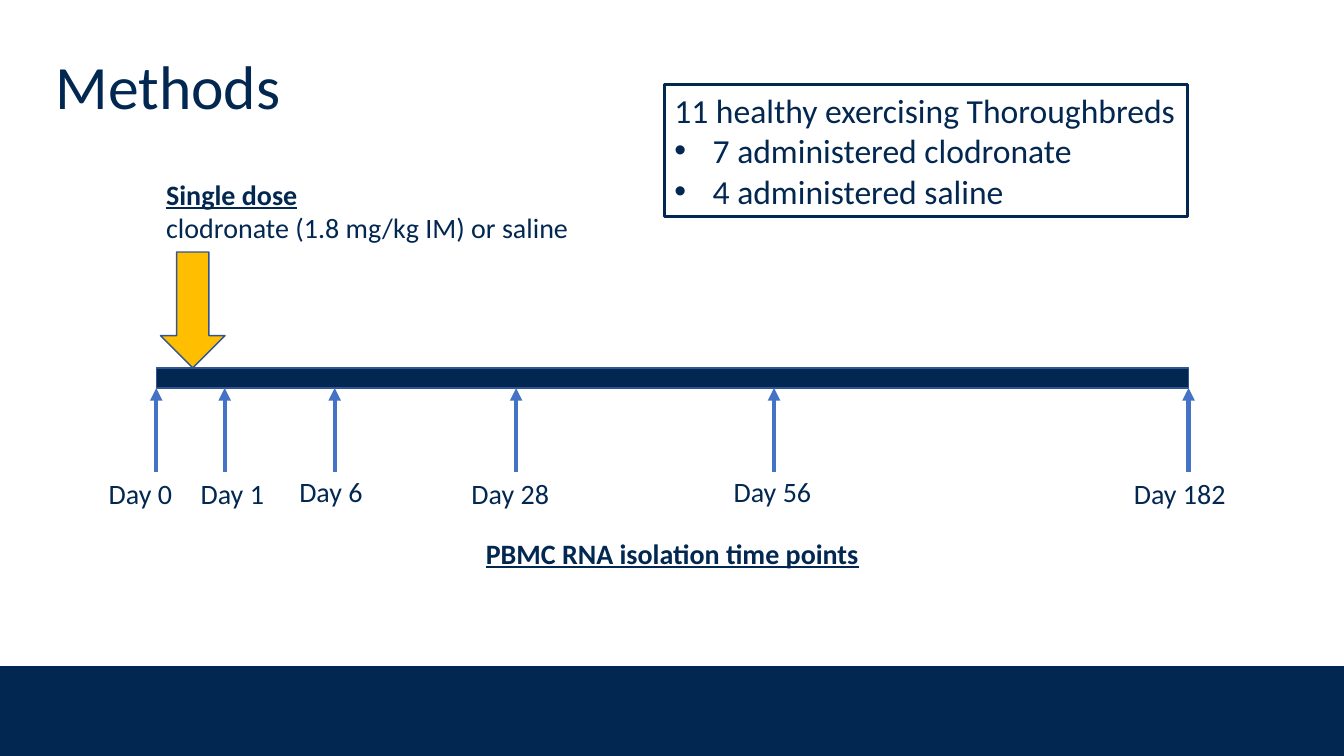
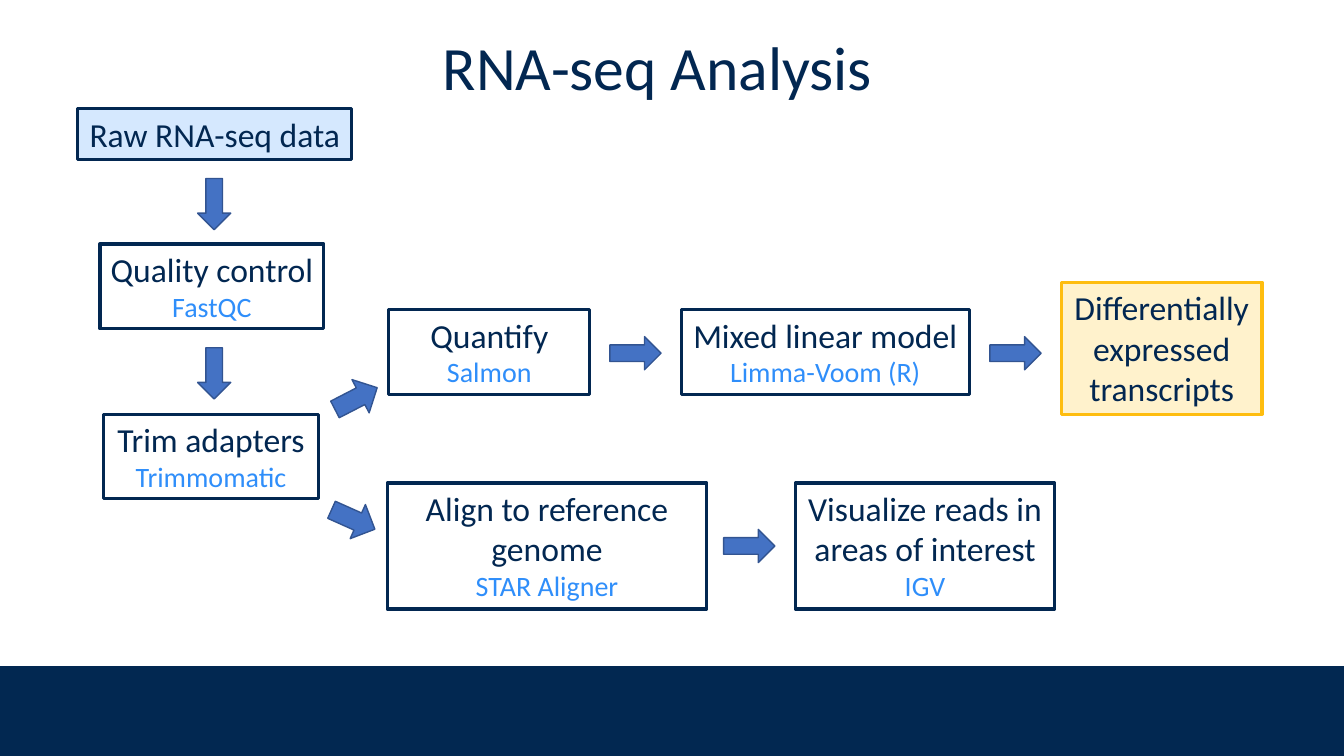
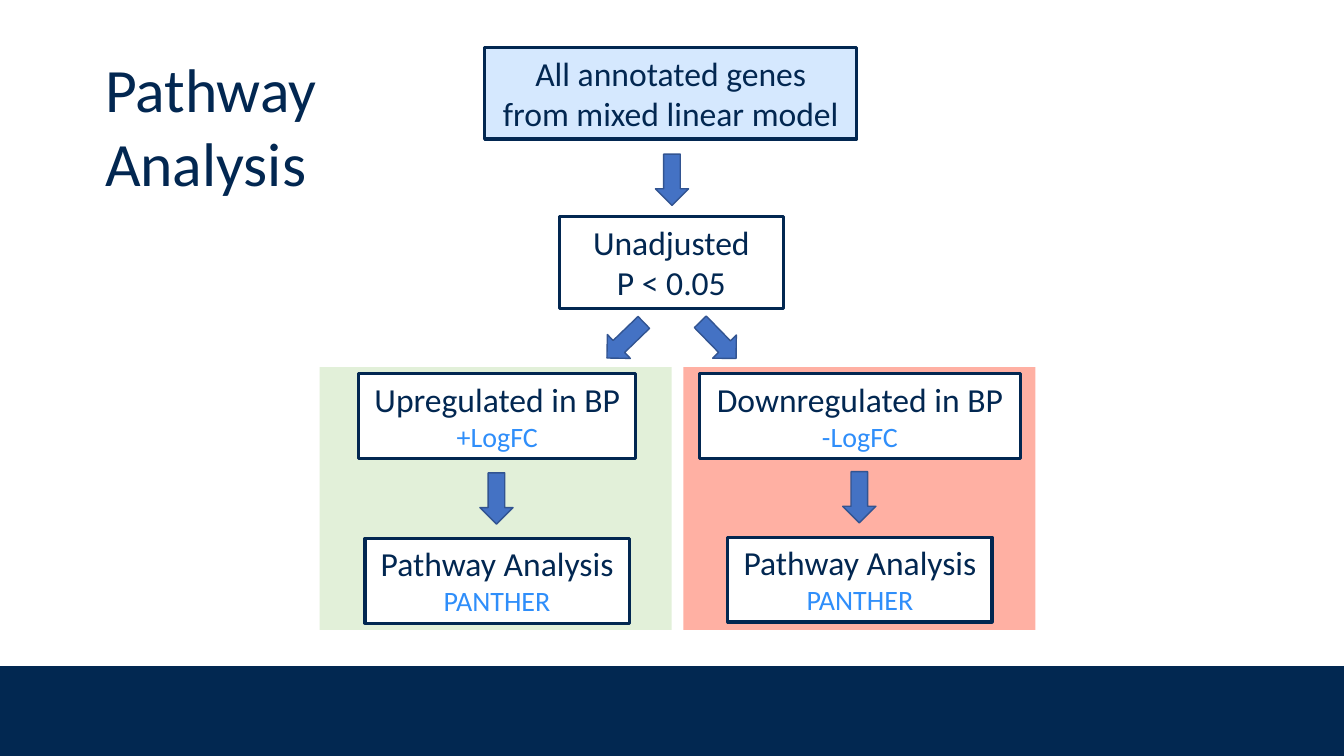
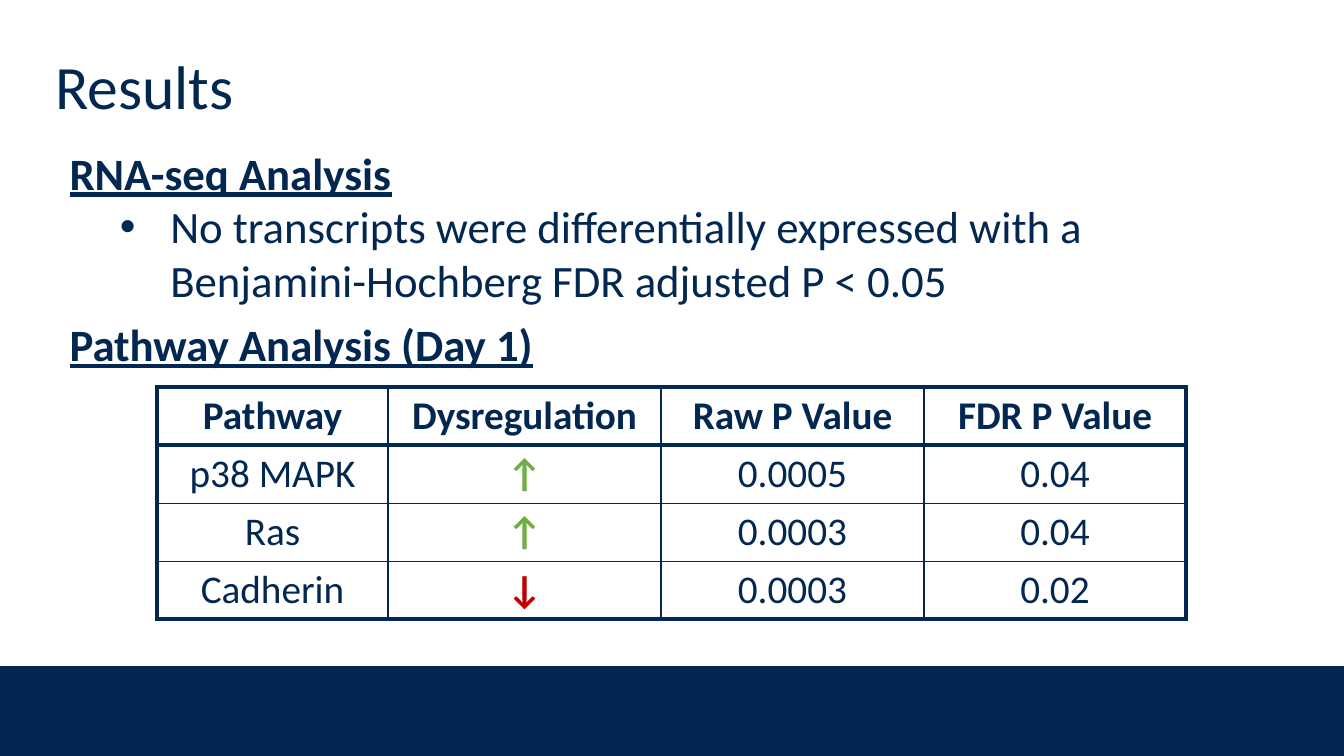
from dataclasses import dataclass
from typing import Optional, Sequence

from lxml import etree
from pptx import Presentation
from pptx import util as u
from pptx.dml.color import RGBColor
from pptx.enum import shapes, text
from pptx.oxml import ns

COLUMNS, ROWS = 32, 18
CELL = u.Inches(7.5) // ROWS
FONT = "Calibri"
NAVY, BAND, WHITE = "022751", "022851", "FFFFFF"
BLUE, BLUE_EDGE, TOOL_BLUE = "4472C4", "325491", "2F8EFA"
AMBER, GOLD, CREAM, SKY = "FFBF00", "FEBD0F", "FFF2CC", "D5E8FE"
RED, PALE_GREEN, GREEN, DARK_RED = "FF2600", "E2F0D9", "70AD47", "C00000"
LEFT, CENTER = text.PP_ALIGN.LEFT, text.PP_ALIGN.CENTER


@dataclass(frozen=True)
class Box:
    left: float
    top: float
    width: float
    height: float

    def place(self) -> tuple:
        return tuple(span(n) for n in (self.left, self.top, self.width, self.height))


@dataclass(frozen=True)
class Line:
    words: str
    size: float = 24
    color: str = NAVY
    heading: bool = False
    margin: float = 0
    hanging: float = 0


@dataclass(frozen=True)
class Step:
    box: Box
    label: Sequence[str]
    tool: str = ""
    fill: Optional[str] = None
    edge: str = NAVY


@dataclass(frozen=True)
class Arrow:
    x: float
    y: float
    rotation: float = 0
    length: float = 1.22
    thickness: float = 0.79


@dataclass(frozen=True)
class Sampling:
    label: str
    x: float
    label_left: float
    label_top: float
    label_width: float


def span(cells: float) -> u.Emu:
    return u.Emu(round(cells * CELL))


def rgb(color: str) -> RGBColor:
    return RGBColor.from_string(color)


def add_run(paragraph, words: str, size: float, color: str,
            bold: bool = False, underline: bool = False) -> None:
    run = paragraph.add_run()
    run.text = words
    run.font.name = FONT
    run.font.size = u.Pt(size)
    run.font.bold = bold
    run.font.underline = underline
    run.font.color.rgb = rgb(color)


def write(frame, lines: Sequence[Line], align=LEFT, side: float = 0.1) -> None:
    frame.word_wrap = True
    frame.auto_size = text.MSO_AUTO_SIZE.NONE
    frame.vertical_anchor = text.MSO_ANCHOR.TOP
    frame.margin_left = frame.margin_right = u.Inches(side)
    frame.margin_top = frame.margin_bottom = u.Inches(0.05)
    for index, line in enumerate(lines):
        paragraph = frame.add_paragraph() if index else frame.paragraphs[0]
        paragraph.alignment = align
        if line.hanging:
            properties = paragraph._p.get_or_add_pPr()
            properties.set("marL", str(u.Inches(line.margin)))
            properties.set("indent", str(-u.Inches(line.hanging)))
            font = etree.SubElement(properties, ns.qn("a:buFont"))
            font.set("typeface", "Arial")
            etree.SubElement(properties, ns.qn("a:buChar")).set("char", "•")
        add_run(paragraph, line.words, line.size, line.color,
                line.heading, line.heading)


def add_text(slide, box: Box, lines: Sequence[Line]) -> None:
    write(slide.shapes.add_textbox(*box.place()).text_frame, lines)


def add_block(slide, box: Box, fill: Optional[str] = None, edge: Optional[str] = None,
              weight: float = 1, kind=shapes.MSO_SHAPE.RECTANGLE, opacity: int = 100):
    block = slide.shapes.add_shape(kind, *box.place())
    block.shadow.inherit = False
    if fill:
        block.fill.solid()
        block.fill.fore_color.rgb = rgb(fill)
        if opacity < 100:
            color = next(block.element.spPr.iter(ns.qn("a:srgbClr")))
            etree.SubElement(color, ns.qn("a:alpha")).set("val", str(opacity * 1000))
    else:
        block.fill.background()
    if edge:
        block.line.color.rgb = rgb(edge)
        block.line.width = u.Pt(weight)
    else:
        block.line.fill.background()
    return block


def add_step(slide, step: Step) -> None:
    block = add_block(slide, step.box, step.fill, step.edge, 2.25)
    lines = [Line(words) for words in step.label]
    if step.tool:
        lines.append(Line(step.tool, 20, TOOL_BLUE))
    write(block.text_frame, lines, CENTER, 0.05)


def add_arrow(slide, arrow: Arrow) -> None:
    box = Box(arrow.x - arrow.length / 2, arrow.y - arrow.thickness / 2,
              arrow.length, arrow.thickness)
    block = add_block(slide, box, BLUE, BLUE_EDGE, kind=shapes.MSO_SHAPE.RIGHT_ARROW)
    block.rotation = arrow.rotation


def add_flow(slide, steps: Sequence[Step], arrows: Sequence[Arrow]) -> None:
    for step in steps:
        add_step(slide, step)
    for arrow in arrows:
        add_arrow(slide, arrow)


def add_sampling(slide, sampling: Sampling) -> None:
    pointer = slide.shapes.add_connector(
        shapes.MSO_CONNECTOR.STRAIGHT, span(sampling.x), span(11.23),
        span(sampling.x), span(9.24))
    pointer.line.color.rgb = rgb(BLUE)
    pointer.line.width = u.Pt(3)
    outline = pointer.line._get_or_add_ln()
    etree.SubElement(outline, ns.qn("a:tailEnd")).set("type", "triangle")
    etree.SubElement(pointer.element.spPr, ns.qn("a:effectLst"))
    add_text(slide, Box(sampling.label_left, sampling.label_top,
                        sampling.label_width, 1.06), [Line(sampling.label, 20)])


def add_slide(deck, title_box: Box, *title: str):
    slide = deck.slides.add_slide(deck.slide_layouts[5])
    heading = slide.shapes.title
    heading.left, heading.top, heading.width, heading.height = title_box.place()
    write(heading.text_frame, [Line(words, 44) for words in title])
    return slide


def share_band(slide) -> None:
    band = add_block(slide, Box(0, 15.86, COLUMNS, 2.14), BAND)
    slide.slide_layout.shapes.element.insert(2, band.element)


def build_methods(deck) -> None:
    slide = add_slide(deck, Box(1.08, 1.01, 6.36, 2.02), "Methods")
    share_band(slide)
    add_block(slide, Box(3.72, 8.76, 24.58, 0.48), NAVY, BLUE_EDGE)
    add_block(slide, Box(3.82, 6, 1.54, 2.76), AMBER, BLUE_EDGE,
              kind=shapes.MSO_SHAPE.DOWN_ARROW)
    for sampling in (
        Sampling("Day 0", 3.72, 2.35, 11.23, 2.3),
        Sampling("Day 1", 5.35, 4.54, 11.23, 2.3),
        Sampling("Day 6", 7.97, 6.89, 11.18, 2.3),
        Sampling("Day 28", 12.29, 10.99, 11.23, 2.59),
        Sampling("Day 56", 18.43, 17.23, 11.18, 2.42),
        Sampling("Day 182", 28.3, 26.76, 11.23, 3.02),
    ):
        add_sampling(slide, sampling)
    add_text(slide, Box(3.72, 4.1, 10.37, 1.85), [
        Line("Single dose", 20, heading=True),
        Line("clodronate (1.8 mg/kg IM) or saline", 20)])
    add_text(slide, Box(11.33, 12.65, 9.62, 1.06),
             [Line("PBMC RNA isolation time points", 20, heading=True)])
    cohort = add_block(slide, Box(15.82, 2.02, 12.46, 3.14), edge=NAVY, weight=2.25)
    write(cohort.text_frame, [
        Line("11 healthy exercising Thoroughbreds"),
        Line("7 administered clodronate", margin=0.38, hanging=0.38),
        Line("4 administered saline", margin=0.38, hanging=0.38)])
    cohort.text_frame.margin_right = 0


def build_sequencing(deck) -> None:
    slide = add_slide(deck, Box(10.3, 0.58, 11.02, 2.02), "RNA-seq Analysis")
    add_flow(slide, [
        Step(Box(1.85, 2.59, 6.53, 1.2), ["Raw RNA-seq data"], fill=SKY),
        Step(Box(2.38, 5.81, 5.33, 2.02), ["Quality control"], "FastQC"),
        Step(Box(2.47, 9.86, 5.11, 2.02), ["Trim adapters"], "Trimmomatic"),
        Step(Box(9.26, 7.37, 4.78, 2.02), ["Quantify"], "Salmon"),
        Step(Box(16.22, 7.37, 6.86, 2.02), ["Mixed linear model"], "Limma-Voom (R)"),
        Step(Box(25.27, 6.72, 4.78, 3.14), ["Differentially expressed transcripts"],
             fill=CREAM, edge=GOLD),
        Step(Box(9.22, 11.5, 7.61, 3), ["Align to reference genome"], "STAR Aligner"),
        Step(Box(18.94, 11.5, 6.17, 3), ["Visualize reads in areas of interest"], "IGV"),
    ], [
        Arrow(5.1, 4.86, 90),
        Arrow(5.1, 8.89, 90),
        Arrow(8.48, 9.49, 332.7, 1.13, 0.89),
        Arrow(8.41, 12.37, 24.1, 1.13, 0.89),
        Arrow(15.13, 8.41),
        Arrow(24.18, 8.41),
        Arrow(17.84, 13),
    ])


def build_pathways(deck) -> None:
    slide = add_slide(deck, Box(2.26, 1.1, 7.08, 3.79), "Pathway", "Analysis")
    add_block(slide, Box(16.27, 8.74, 8.38, 6.26), RED, opacity=36)
    add_block(slide, Box(7.61, 8.74, 8.38, 6.26), PALE_GREEN)
    add_flow(slide, [
        Step(Box(11.54, 1.13, 8.86, 2.18),
             ["All annotated genes", "from mixed linear model"], fill=SKY),
        Step(Box(13.32, 5.16, 5.33, 2.18), ["Unadjusted", "P < 0.05"]),
        Step(Box(8.54, 8.9, 6.6, 2.02), ["Upregulated in BP"], "+LogFC", WHITE),
        Step(Box(16.66, 8.9, 7.63, 2.02), ["Downregulated in BP"], "-LogFC", WHITE),
        Step(Box(8.69, 12.82, 6.29, 2.02), ["Pathway Analysis"], "PANTHER", WHITE),
        Step(Box(17.33, 12.79, 6.29, 2.02), ["Pathway Analysis"], "PANTHER", WHITE),
    ], [
        Arrow(16, 4.28, 90),
        Arrow(14.89, 8.1, 136),
        Arrow(17.1, 8.1, 45.7),
        Arrow(11.82, 11.87, 90),
        Arrow(20.46, 11.84, 90),
    ])


def add_borders(cell, **weights: float) -> None:
    properties = cell._tc.get_or_add_tcPr()
    for side, weight in weights.items():
        border = etree.SubElement(properties, ns.qn(f"a:ln{side}"))
        border.set("w", str(u.Pt(weight)))
        fill = etree.SubElement(border, ns.qn("a:solidFill"))
        etree.SubElement(fill, ns.qn("a:srgbClr")).set("val", NAVY)


def add_pathway_table(slide) -> None:
    records = [
        ("Pathway", "Dysregulation", "Raw P Value", "FDR P Value"),
        ("p38 MAPK", "↑", "0.0005", "0.04"),
        ("Ras", "↑", "0.0003", "0.04"),
        ("Cadherin", "↓", "0.0003", "0.02"),
    ]
    widths = (5.5, 6.5, 6.26, 6.24)
    row_height = 1.36
    trends = {"↑": GREEN, "↓": DARK_RED}
    box = Box(3.74, 9.22, sum(widths), row_height * len(records))
    table = slide.shapes.add_table(len(records), len(widths), *box.place()).table
    table.first_row = table.horz_banding = False
    for column, width in zip(table.columns, widths):
        column.width = span(width)
    last_row, last_column = len(records) - 1, len(widths) - 1
    for r, record in enumerate(records):
        table.rows[r].height = span(row_height)
        for c, words in enumerate(record):
            cell = table.cell(r, c)
            add_borders(cell, L=1 if c else 3, R=3 if c == last_column else 1,
                        T=3 if r < 2 else 1, B=3 if r in (0, last_row) else 1)
            cell.fill.background()
            cell.vertical_anchor = text.MSO_ANCHOR.MIDDLE
            paragraph = cell.text_frame.paragraphs[0]
            paragraph.alignment = CENTER
            add_run(paragraph, words, 28, trends.get(words, NAVY),
                    bold=r == 0 or words in trends)


def build_results(deck) -> None:
    slide = add_slide(deck, Box(1.08, 1.01, 29.78, 2.02), "Results")
    add_text(slide, Box(1.42, 3.34, 29.45, 4.13), [
        Line("RNA-seq Analysis", 32, heading=True),
        Line("No transcripts were differentially expressed with a "
             "Benjamini-Hochberg FDR adjusted P < 0.05", 32, margin=1, hanging=0.5)])
    add_text(slide, Box(1.42, 7.42, 29.45, 1.54),
             [Line("Pathway Analysis (Day 1)", 32, heading=True)])
    add_pathway_table(slide)


def main() -> None:
    deck = Presentation()
    deck.slide_width, deck.slide_height = span(COLUMNS), span(ROWS)
    for build in (build_methods, build_sequencing, build_pathways, build_results):
        build(deck)
    deck.save("out.pptx")


if __name__ == "__main__":
    main()
